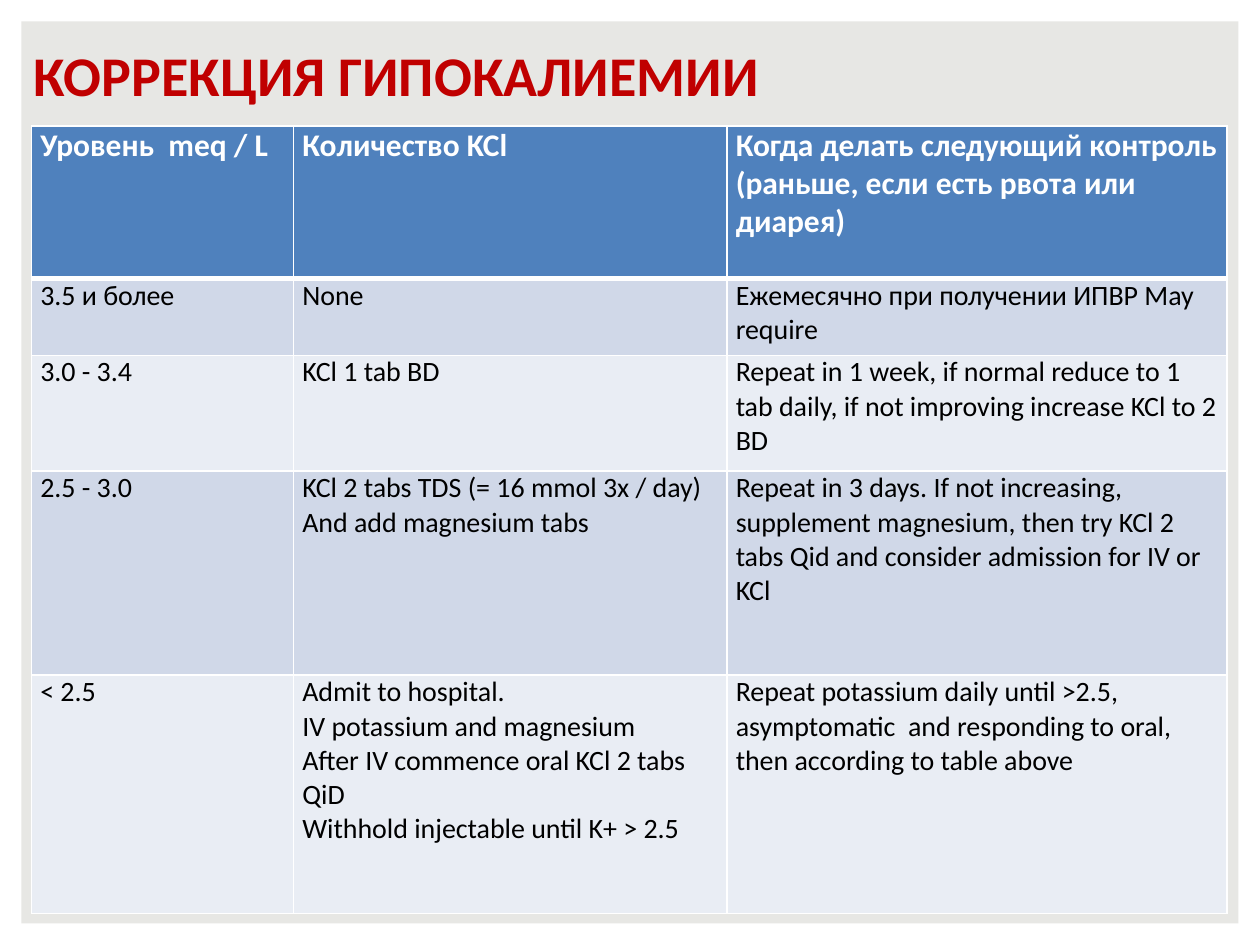
from lxml import etree
from pptx import Presentation
from pptx.dml.color import RGBColor
from pptx.enum.shapes import MSO_SHAPE
from pptx.oxml.ns import qn
from pptx.util import Inches, Pt

RECTANGLE = MSO_SHAPE.RECTANGLE
FONT = "Calibri"
WHITE, BLACK, RED, PANEL = "FFFFFF", "000000", "C00000", "E7E7E4"
HEADER, BANDS = "4F81BD", ("D0D8E8", "E9EDF4")

COLUMN_WIDTHS = (2.08, 3.44, 3.97)
ROW_HEIGHTS = (1.21, 0.61, 0.92, 1.62, 1.89)
ROWS = (
    ("Уровень  meq / L", "Количество KCl",
     "Когда делать следующий контроль (раньше, если есть рвота или диарея)"),
    ("3.5 и более", "None", "Ежемесячно при получении ИПВР May require"),
    ("3.0 - 3.4", "KCl 1 tab BD",
     "Repeat in 1 week, if normal reduce to 1 tab daily, "
     "if not improving increase KCl to 2 BD"),
    ("2.5 - 3.0", "KCl 2 tabs TDS (= 16 mmol 3x / day)\nAnd add magnesium tabs",
     "Repeat in 3 days. If not increasing, supplement magnesium, "
     "then try KCl 2 tabs Qid and consider admission for IV or KCl"),
    ("< 2.5",
     "Admit to hospital.\nIV potassium and magnesium\n"
     "After IV commence oral KCl 2 tabs QiD\nWithhold injectable until K+ > 2.5",
     "Repeat potassium daily until >2.5, asymptomatic  and responding to oral, "
     "then according to table above"),
)


def rgb(color):
    return RGBColor.from_string(color)


def format_text(tf, size, color, bold):
    for p in tf.paragraphs:
        for r in p.runs:
            r.font.name = FONT
            r.font.size = Pt(size)
            r.font.bold = bold
            r.font.color.rgb = rgb(color)


def set_borders(cell, widths):
    """Draw white borders; widths are points for left, right, top, bottom."""
    tc_pr = cell._tc.get_or_add_tcPr()
    for i, (side, width) in enumerate(zip("LRTB", widths)):
        ln = etree.Element(qn(f"a:ln{side}"), w=str(Pt(width)))
        fill = etree.SubElement(ln, qn("a:solidFill"))
        etree.SubElement(fill, qn("a:srgbClr"), val=WHITE)
        tc_pr.insert(i, ln)


def add_panel(s, left, top, width, height):
    sp = s.shapes.add_shape(RECTANGLE, left, top, width, height)
    sp.shadow.inherit = False
    sp.fill.solid()
    sp.fill.fore_color.rgb = rgb(PANEL)
    sp.line.fill.background()


def add_title(s, left, top, width, height):
    tf = s.shapes.add_textbox(left, top, width, height).text_frame
    tf.word_wrap = True
    tf.text = "КОРРЕКЦИЯ ГИПОКАЛИЕМИИ"
    format_text(tf, 32, RED, True)


def add_dose_table(s, left, top, width, height):
    table = s.shapes.add_table(len(ROWS), len(COLUMN_WIDTHS),
                               left, top, width, height).table
    for column, w in zip(table.columns, COLUMN_WIDTHS):
        column.width = Inches(w)
    for i, (row, h, texts) in enumerate(zip(table.rows, ROW_HEIGHTS, ROWS)):
        row.height = Inches(h)
        header = i == 0
        for cell, text in zip(row.cells, texts):
            cell.text = text
            cell.margin_left = cell.margin_right = Inches(0.07)
            cell.margin_top = cell.margin_bottom = 0
            cell.fill.solid()
            cell.fill.fore_color.rgb = rgb(HEADER if header else BANDS[(i - 1) % 2])
            if header:
                format_text(cell.text_frame, 18, WHITE, True)
            else:
                format_text(cell.text_frame, 16, BLACK, False)
            set_borders(cell, (1, 1, 3 if i == 1 else 1, 3 if header else 1))


def main():
    prs = Presentation()
    prs.slide_width, prs.slide_height = Inches(10), Inches(7.5)
    s = prs.slides.add_slide(prs.slide_layouts[6])
    add_panel(s, Inches(0.17), Inches(0.17), Inches(9.66), Inches(7.16))
    add_dose_table(s, Inches(0.25), Inches(1), Inches(sum(COLUMN_WIDTHS)),
                   Inches(sum(ROW_HEIGHTS)))
    add_title(s, Inches(0.17), Inches(0.27), Inches(9.5), Inches(0.64))
    prs.save("out.pptx")


if __name__ == "__main__":
    main()
